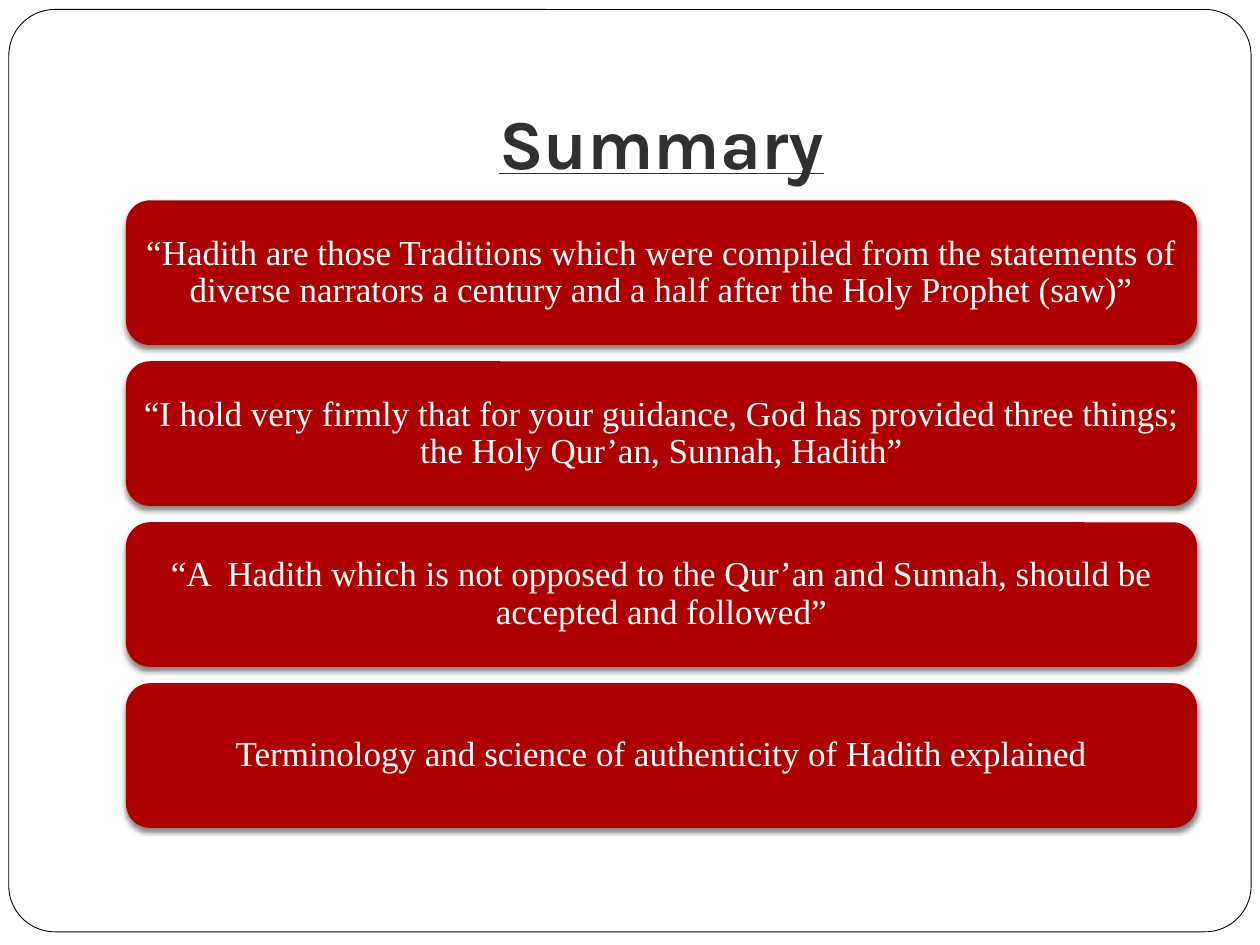
import pptx
import pptx.dml.color
import pptx.enum.shapes
import pptx.enum.text
import pptx.oxml
import pptx.oxml.ns
import pptx.util

SLIDE_WIDTH = pptx.util.Inches(10)
SLIDE_HEIGHT = pptx.util.Inches(7.5)
CARD_GAP = pptx.util.Inches(0.13)
ROUNDED = pptx.enum.shapes.MSO_SHAPE.ROUNDED_RECTANGLE
ANCHOR = pptx.enum.text.MSO_ANCHOR
SUMMARY_POINTS = [
    "“Hadith are those Traditions which were compiled from the statements of "
    "diverse narrators a century and a half after the Holy Prophet (saw)”",
    "“I hold very firmly that for your guidance, God has provided three things; "
    "the Holy Qur’an, Sunnah, Hadith”",
    "“A  Hadith which is not opposed to the Qur’an and Sunnah, should be "
    "accepted and followed”",
    "Terminology and science of authenticity of Hadith explained",
]


def color(hex_value):
    return pptx.dml.color.RGBColor.from_string(hex_value)


def share_box(left, top, width, height):
    return (int(left * SLIDE_WIDTH), int(top * SLIDE_HEIGHT),
            int(width * SLIDE_WIDTH), int(height * SLIDE_HEIGHT))


def write_text(frame, wording, font_name, size, hex_value, anchor, insets):
    frame.word_wrap = True
    frame.vertical_anchor = anchor
    (frame.margin_left, frame.margin_top,
     frame.margin_right, frame.margin_bottom) = map(pptx.util.Inches, insets)
    paragraph = frame.paragraphs[0]
    paragraph.alignment = pptx.enum.text.PP_ALIGN.CENTER
    run = paragraph.add_run()
    run.text = wording
    run.font.name = font_name
    run.font.size = pptx.util.Pt(size)
    run.font.color.rgb = color(hex_value)
    return paragraph, run


def add_shadow(card):
    card._element.spPr.append(pptx.oxml.parse_xml(
        f'<a:effectLst {pptx.oxml.ns.nsdecls("a")}>'
        f'<a:outerShdw blurRad="{pptx.util.Pt(3)}" dist="{pptx.util.Pt(2)}" '
        'dir="5400000" rotWithShape="0"><a:srgbClr val="000000">'
        '<a:alpha val="50000"/></a:srgbClr></a:outerShdw></a:effectLst>'))


def add_frame(slide, box):
    border = slide.shapes.add_shape(ROUNDED, *box)
    border.adjustments[0] = 0.05
    border.shadow.inherit = False
    border.fill.solid()
    border.fill.fore_color.rgb = color("FFFFFF")
    border.line.color.rgb = color("000000")
    border.line.width = pptx.util.Pt(0.5)


def add_heading(slide, box):
    heading = slide.shapes.add_textbox(*box)
    _, run = write_text(heading.text_frame, "Summary", "Karla", 40, "303030",
                        ANCHOR.BOTTOM, (0.1, 0.05, 0.1, 0.1))
    run.font.bold = True
    run.font.underline = True


def add_cards(slide, box, points):
    left, top, width, height = box
    pitch = (height + CARD_GAP) // len(points)
    for row, point in enumerate(points):
        card = slide.shapes.add_shape(
            ROUNDED, left, top + row * pitch, width, pitch - CARD_GAP)
        card.fill.solid()
        card.fill.fore_color.rgb = color("AD0101")
        card.line.fill.background()
        add_shadow(card)
        paragraph, _ = write_text(card.text_frame, point, "Times New Roman", 20,
                                  "FFFFFF", ANCHOR.MIDDLE, (0.08,) * 4)
        paragraph.line_spacing = 0.9
        paragraph.space_after = pptx.util.Pt(7)


def main():
    deck = pptx.Presentation()
    deck.slide_width = SLIDE_WIDTH
    deck.slide_height = SLIDE_HEIGHT
    slide = deck.slides.add_slide(deck.slide_layouts[6])
    add_frame(slide, share_box(0.007, 0.01, 0.986, 0.976))
    add_heading(slide, share_box(0.1, 0.04, 0.85, 0.167))
    add_cards(slide, share_box(0.1, 0.212, 0.85, 0.664), SUMMARY_POINTS)
    deck.save("out.pptx")


if __name__ == "__main__":
    main()
